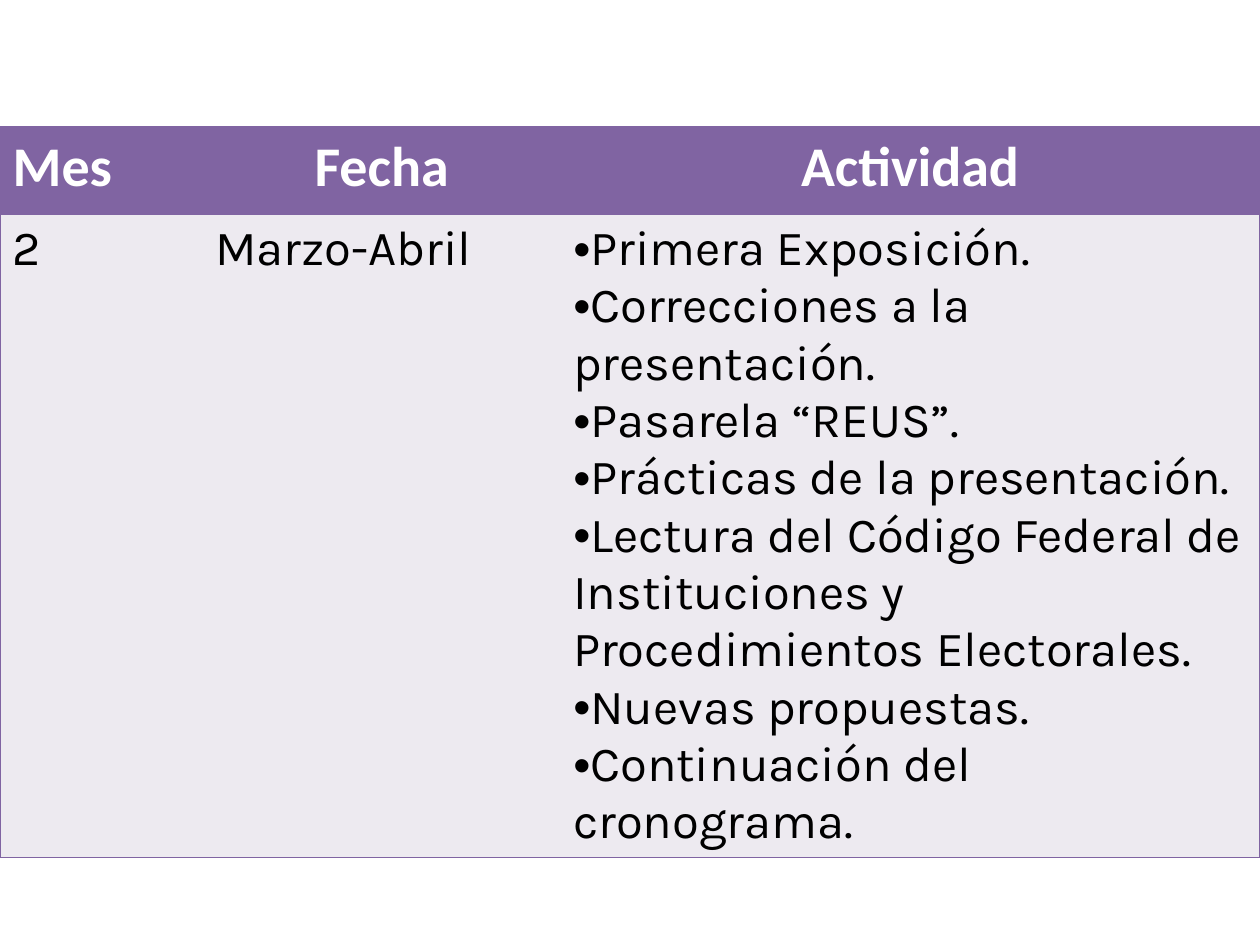
import pptx
import pptx.dml.color
import pptx.enum.text
import pptx.oxml.ns
import pptx.util
from lxml import etree

Inches = pptx.util.Inches
qn = pptx.oxml.ns.qn

PURPLE, LAVENDER, WHITE, BLACK = "8064A2", "EDEAF0", "FFFFFF", "000000"
NO_STYLE = "{2D5ABB26-0587-4C30-8999-92F81FD0307C}"
COLUMN_WIDTHS = [1.61, 2.84, 5.55]
ROW_HEIGHTS = [0.69, 4.77]
HEADERS = ["Mes", "Fecha", "Actividad"]
ACTIVITIES = [
    "Primera Exposición.",
    "Correcciones a la presentación.",
    "Pasarela “REUS”.",
    "Prácticas de la presentación.",
    "Lectura del Código Federal de Instituciones y Procedimientos Electorales.",
    "Nuevas propuestas.",
    "Continuación del cronograma.",
]
ENTRY = [["2"], ["Marzo-Abril"], ACTIVITIES]


def rgb(color):
    return pptx.dml.color.RGBColor.from_string(color)


def set_borders(cell, sides, color):
    """Draw 1 pt lines on the sides, given in the schema's order L, R, T, B."""
    tc_pr = cell._tc.get_or_add_tcPr()
    for i, side in enumerate(sides):
        ln = etree.Element(qn(f"a:ln{side}"), w=str(pptx.util.Pt(1)))
        fill = etree.SubElement(ln, qn("a:solidFill"))
        etree.SubElement(fill, qn("a:srgbClr"), val=color)
        tc_pr.insert(i, ln)


def add_bullet(p):
    """Put the bullet before defRPr, as the schema orders them."""
    p_pr = p._p.get_or_add_pPr()
    p_pr.insert(0, etree.Element(qn("a:buFont"), typeface="Arial"))
    p_pr.insert(1, etree.Element(qn("a:buChar"), char="•"))


def fill_cell(cell, lines, fill, font, size, color, bold=False, centered=False):
    cell.fill.solid()
    cell.fill.fore_color.rgb = rgb(fill)
    tf = cell.text_frame
    tf.text = "\n".join(lines)
    for p in tf.paragraphs:
        p.font.name = font
        p.font.size = pptx.util.Pt(size)
        p.font.bold = bold
        p.font.color.rgb = rgb(color)
        if centered:
            p.alignment = pptx.enum.text.PP_ALIGN.CENTER
        if len(lines) > 1:
            add_bullet(p)


def add_schedule(s):
    frame = s.shapes.add_table(
        len(ROW_HEIGHTS), len(COLUMN_WIDTHS), Inches(0), Inches(1.01),
        Inches(sum(COLUMN_WIDTHS)), Inches(sum(ROW_HEIGHTS)))
    table = frame.table
    table._tbl.tblPr.find(qn("a:tableStyleId")).text = NO_STYLE
    table.horz_banding = False
    for column, width in zip(table.columns, COLUMN_WIDTHS):
        column.width = Inches(width)
    for row, height in zip(table.rows, ROW_HEIGHTS):
        row.height = Inches(height)

    for i, (header, lines) in enumerate(zip(HEADERS, ENTRY)):
        head, body = table.cell(0, i), table.cell(1, i)
        fill_cell(head, [header], PURPLE, "Calibri", 32, WHITE, bold=True, centered=i > 0)
        fill_cell(body, lines, LAVENDER, "Karla", 28, BLACK)
        outer = {0: ["L"], len(HEADERS) - 1: ["R"]}.get(i, [])
        for cell in (head, body):
            set_borders(cell, outer + ["T", "B"], PURPLE)


def main():
    prs = pptx.Presentation()
    prs.slide_width, prs.slide_height = Inches(10), Inches(7.5)
    s = prs.slides.add_slide(prs.slide_layouts[6])
    add_schedule(s)
    prs.save("out.pptx")


if __name__ == "__main__":
    main()
